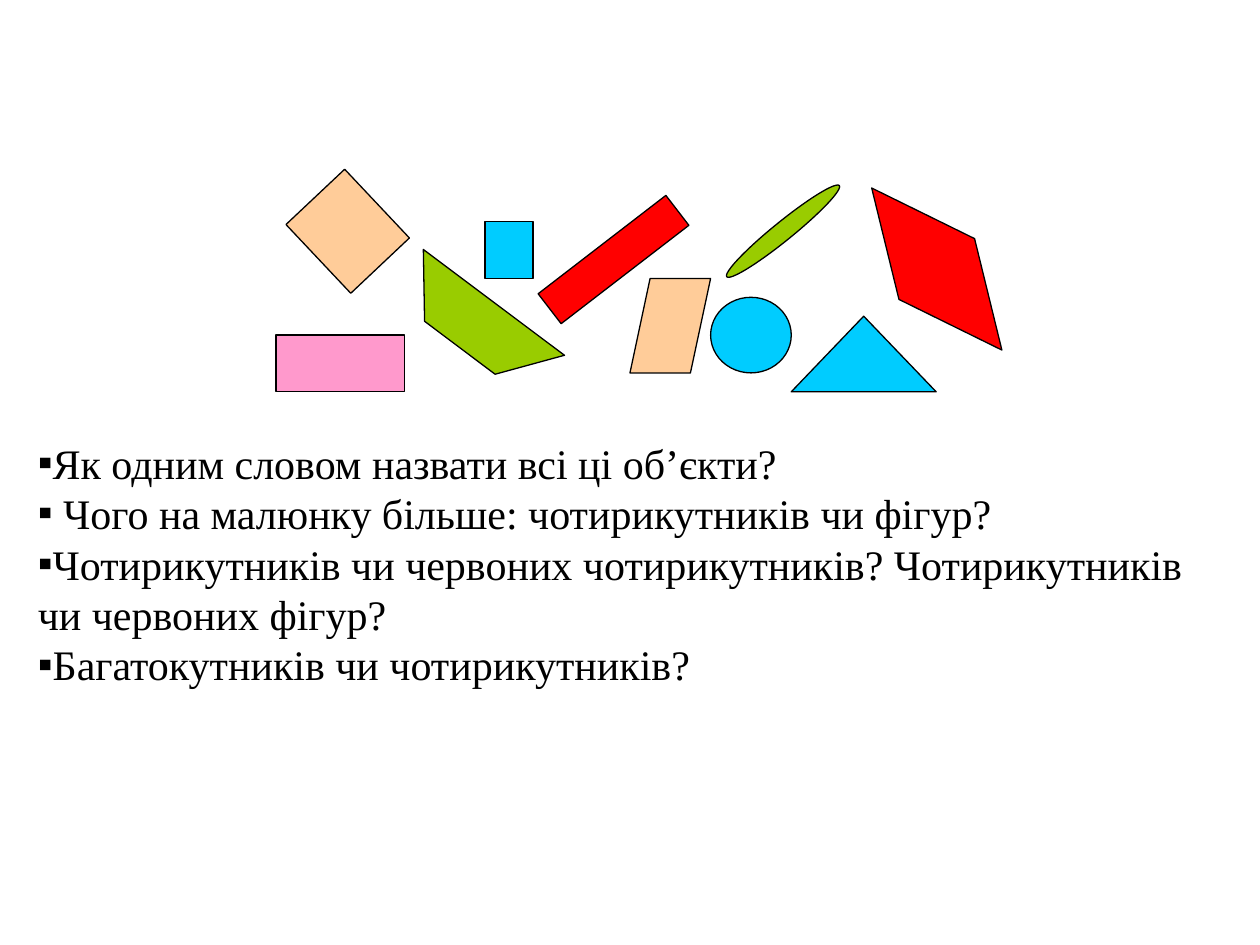
from typing import NamedTuple

from lxml import etree
from pptx import Presentation
from pptx.dml.color import RGBColor
from pptx.enum.shapes import MSO_SHAPE
from pptx.enum.text import MSO_ANCHOR, MSO_AUTO_SIZE, PP_ALIGN
from pptx.oxml.ns import qn
from pptx.util import Inches, Pt

RECT = MSO_SHAPE.RECTANGLE
OVAL = MSO_SHAPE.OVAL
SLANTED = MSO_SHAPE.PARALLELOGRAM
TRIANGLE = MSO_SHAPE.ISOSCELES_TRIANGLE
DIAMOND = MSO_SHAPE.DIAMOND

PEACH, BLUE, RED = "FFCC99", "00CCFF", "FF0000"
GREEN, PINK, BLACK = "99CC00", "FF99CC", "000000"
FONT = "Times New Roman"


class Figure(NamedTuple):
    kind: int
    left: float
    top: float
    width: float
    height: float
    fill: str
    rotation: float = 0


FIGURES = [
    Figure(RECT, 2.44, 1.46, 0.64, 0.75, PEACH, 316.7),
    Figure(RECT, 3.85, 1.76, 0.38, 0.45, BLUE),
    Figure(RECT, 4.23, 1.91, 1.28, 0.3, RED, 322.4),
    Figure(SLANTED, 5, 2.21, 0.64, 0.75, PEACH),
    Figure(OVAL, 5.64, 2.36, 0.64, 0.6, BLUE),
    Figure(TRIANGLE, 6.28, 2.51, 1.15, 0.6, BLUE),
    Figure(DIAMOND, 7.05, 1.31, 0.77, 1.65, RED, 321.2),
    Figure(OVAL, 5.64, 1.76, 1.15, 0.15, GREEN, 321),
    Figure(RECT, 2.19, 2.66, 1.02, 0.45, PINK),
]
QUADRILATERAL = [(3.36, 1.98), (3.37, 2.55), (3.93, 2.97), (4.48, 2.82)]

QUESTIONS = [
    "Як одним словом назвати всі ці об’єкти?",
    " Чого на малюнку більше: чотирикутників чи фігур?",
    "Чотирикутників чи червоних чотирикутників? "
    "Чотирикутників чи червоних фігур?",
    "Багатокутників чи чотирикутників?",
]


def color(value: str) -> RGBColor:
    return RGBColor.from_string(value)


def paint(sp, fill: str) -> None:
    sp.shadow.inherit = False
    sp.fill.solid()
    sp.fill.fore_color.rgb = color(fill)
    sp.line.color.rgb = color(BLACK)
    sp.line.width = Pt(0.75)


def draw_figure(shapes, fig: Figure) -> None:
    sp = shapes.add_shape(fig.kind, Inches(fig.left), Inches(fig.top),
                          Inches(fig.width), Inches(fig.height))
    sp.rotation = fig.rotation
    paint(sp, fig.fill)


def draw_polygon(shapes, points: list[tuple[float, float]], fill: str) -> None:
    start, *rest = [(Inches(x), Inches(y)) for x, y in points]
    builder = shapes.build_freeform(*start)
    builder.add_line_segments(rest, close=True)
    paint(builder.convert_to_shape(), fill)


def set_bullet(p, char: str) -> None:
    pPr = p._p.get_or_add_pPr()
    pPr.set("marL", "0")
    pPr.set("indent", "0")
    etree.SubElement(pPr, qn("a:buFont"), typeface=FONT)
    etree.SubElement(pPr, qn("a:buChar"), char=char)


def write_questions(sp, questions: list[str]) -> None:
    sp.left, sp.top = Inches(0.2), Inches(3.42)
    sp.width, sp.height = Inches(9.61), Inches(2.12)
    tf = sp.text_frame
    tf.word_wrap = True
    tf.auto_size = MSO_AUTO_SIZE.SHAPE_TO_FIT_TEXT
    tf.vertical_anchor = MSO_ANCHOR.TOP
    for i, question in enumerate(questions):
        p = tf.add_paragraph() if i else tf.paragraphs[0]
        p.alignment = PP_ALIGN.LEFT
        p.line_spacing = 1.0
        p.space_before = p.space_after = Pt(0)
        set_bullet(p, "▪")
        r = p.add_run()
        r.text = question
        r.font.name = FONT
        r.font.size = Pt(24)
        r.font.color.rgb = color(BLACK)


def main() -> None:
    prs = Presentation()
    prs.slide_width, prs.slide_height = Inches(10), Inches(7.5)
    s = prs.slides.add_slide(prs.slide_layouts[1])

    # The slide has no title
    title = s.shapes.title._element
    title.getparent().remove(title)

    # Questions
    write_questions(s.placeholders[1], QUESTIONS)

    # Geometric figures
    group = s.shapes.add_group_shape()
    for fig in FIGURES:
        draw_figure(group.shapes, fig)
    draw_polygon(group.shapes, QUADRILATERAL, GREEN)

    prs.save("out.pptx")


if __name__ == "__main__":
    main()
